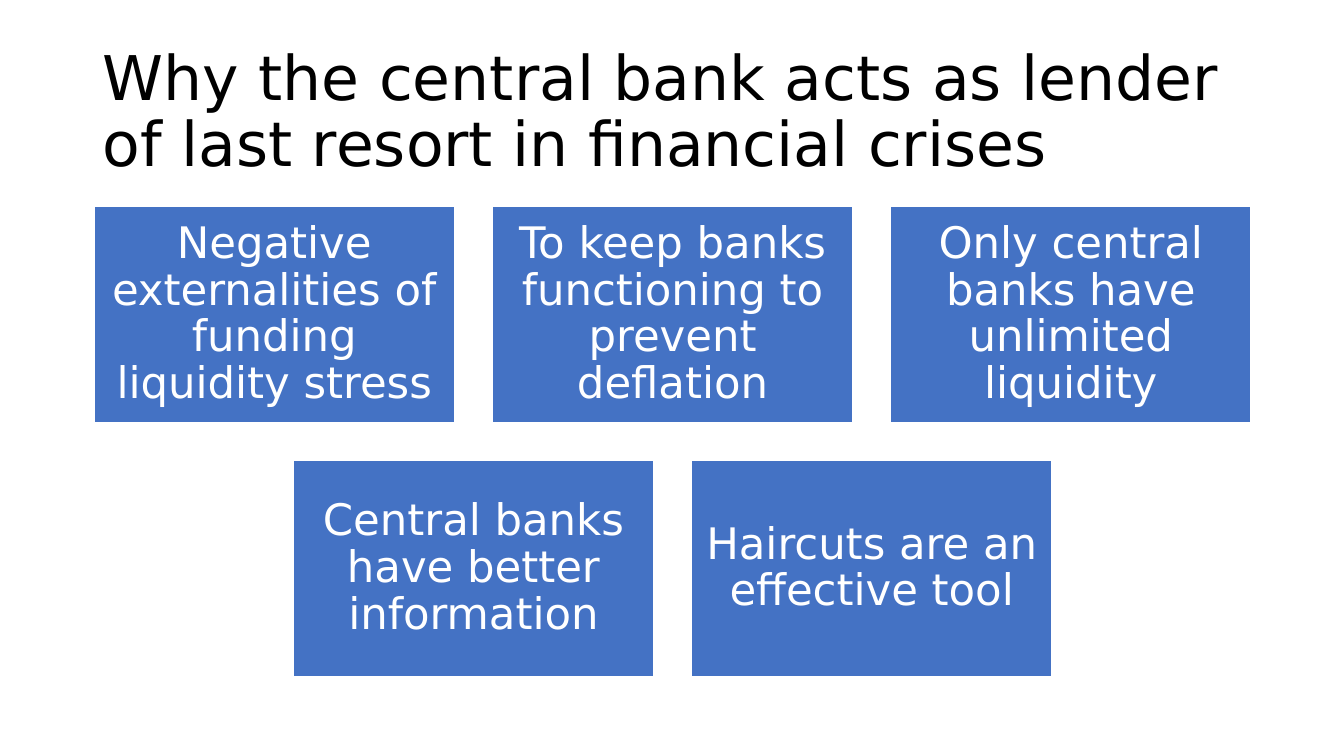
"""Build a slide listing the reasons a central bank acts as lender of last resort."""
import pptx
import pptx.dml.color
import pptx.enum.shapes
import pptx.enum.text
import pptx.util

Inches = pptx.util.Inches
Pt = pptx.util.Pt
RGBColor = pptx.dml.color.RGBColor

TITLE = "Why the central bank acts as lender of last resort in financial crises"
REASON_ROWS = [
    [
        "Negative externalities of funding liquidity stress",
        "To keep banks functioning to prevent deflation",
        "Only central banks have unlimited liquidity",
    ],
    [
        "Central banks have better information",
        "Haircuts are an effective tool",
    ],
]

FONT = "DejaVu Sans"
BLACK = RGBColor(0x00, 0x00, 0x00)
WHITE = RGBColor(0xFF, 0xFF, 0xFF)
BLUE = RGBColor(0x44, 0x72, 0xC4)

SLIDE_WIDTH, SLIDE_HEIGHT = 13.33, 7.5
CONTENT_LEFT, CONTENT_WIDTH = 0.92, 11.5
BOX_WIDTH, BOX_HEIGHT = 3.59, 2.16
GAP = 0.36
ROWS_TOP = 2.04


def write_text(shape, text, size, color, alignment, inset_x, inset_y):
    frame = shape.text_frame
    frame.word_wrap = True
    frame.vertical_anchor = pptx.enum.text.MSO_ANCHOR.MIDDLE
    frame.margin_left = frame.margin_right = Inches(inset_x)
    frame.margin_top = frame.margin_bottom = Inches(inset_y)
    paragraph = frame.paragraphs[0]
    paragraph.alignment = alignment
    paragraph.line_spacing = 0.9
    run = paragraph.add_run()
    run.text = text
    run.font.name = FONT
    run.font.size = Pt(size)
    run.font.color.rgb = color


def add_reason(slide, text, left, top):
    shape = slide.shapes.add_shape(
        pptx.enum.shapes.MSO_SHAPE.RECTANGLE,
        Inches(left), Inches(top), Inches(BOX_WIDTH), Inches(BOX_HEIGHT),
    )
    shape.shadow.inherit = False
    shape.fill.solid()
    shape.fill.fore_color.rgb = BLUE
    shape.line.color.rgb = WHITE
    shape.line.width = Pt(2)
    write_text(shape, text, 31, WHITE, pptx.enum.text.PP_ALIGN.CENTER, 0.13, 0.13)


def main():
    presentation = pptx.Presentation()
    presentation.slide_width = Inches(SLIDE_WIDTH)
    presentation.slide_height = Inches(SLIDE_HEIGHT)
    slide = presentation.slides.add_slide(presentation.slide_layouts[6])

    title = slide.shapes.add_textbox(
        Inches(CONTENT_LEFT), Inches(0.4), Inches(CONTENT_WIDTH), Inches(1.45)
    )
    write_text(title, TITLE, 44, BLACK, pptx.enum.text.PP_ALIGN.LEFT, 0.1, 0.05)

    for row, reasons in enumerate(REASON_ROWS):
        row_width = len(reasons) * (BOX_WIDTH + GAP) - GAP
        row_left = CONTENT_LEFT + (CONTENT_WIDTH - row_width) / 2
        top = ROWS_TOP + row * (BOX_HEIGHT + GAP)
        for column, reason in enumerate(reasons):
            add_reason(slide, reason, row_left + column * (BOX_WIDTH + GAP), top)

    presentation.save("out.pptx")


if __name__ == "__main__":
    main()
